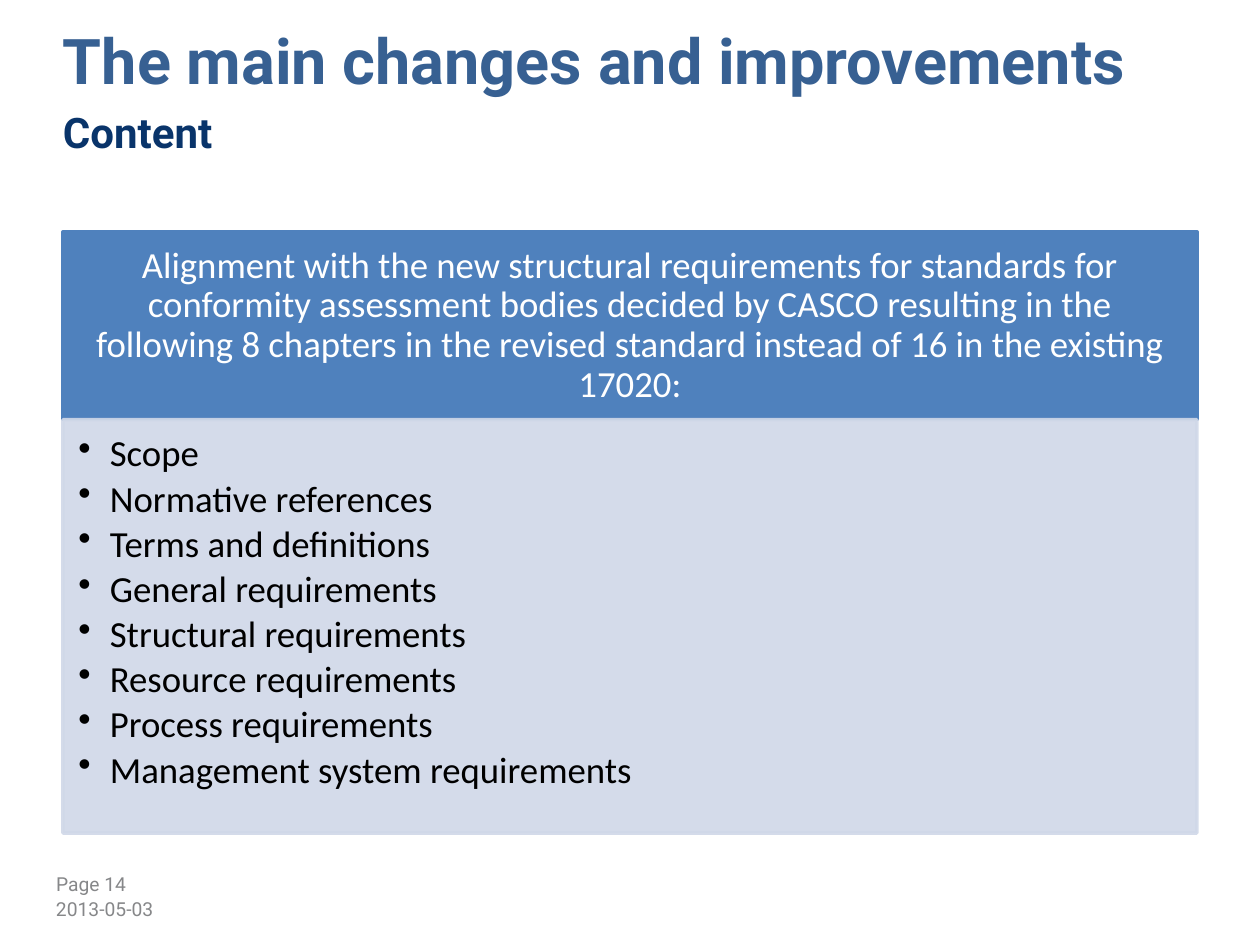
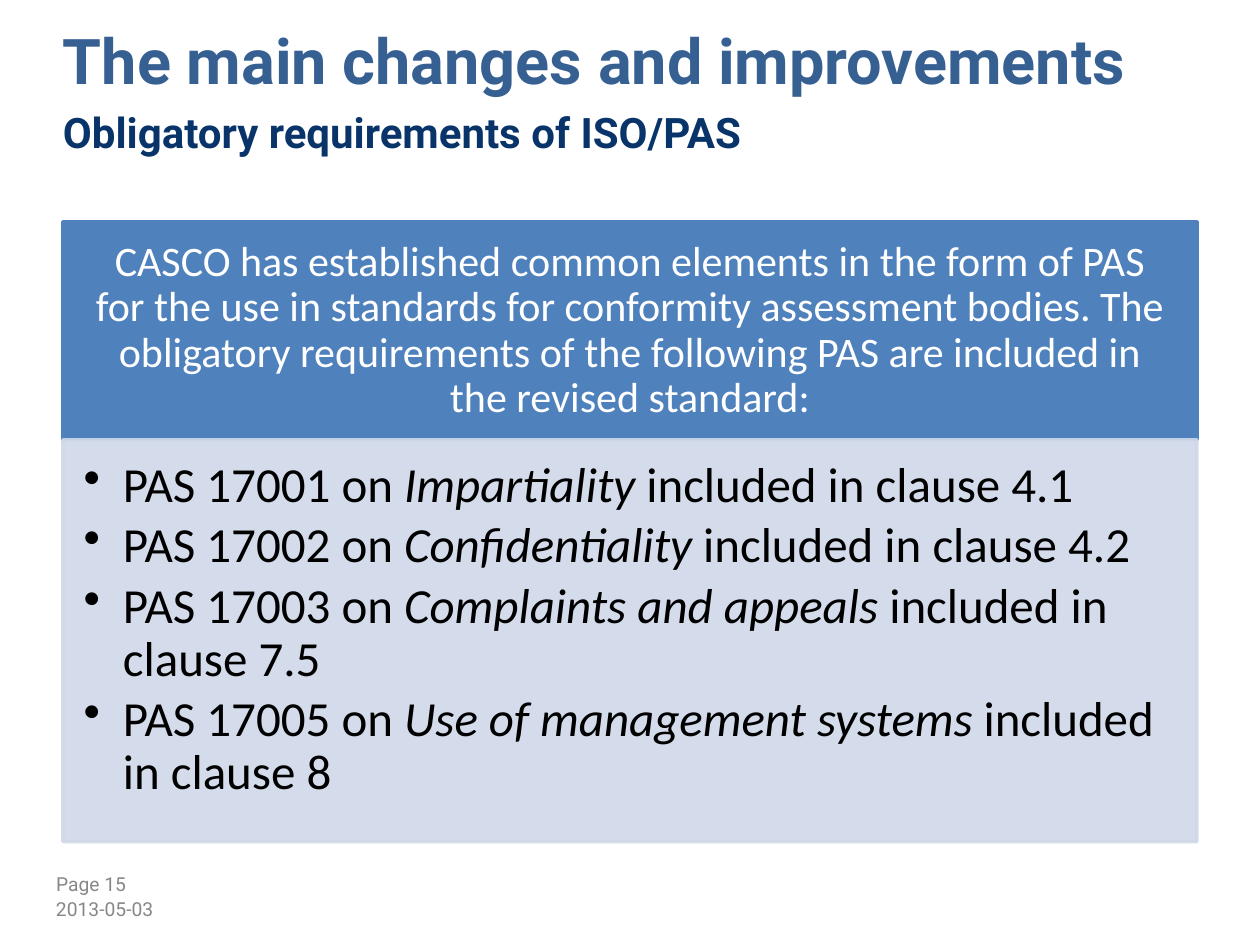
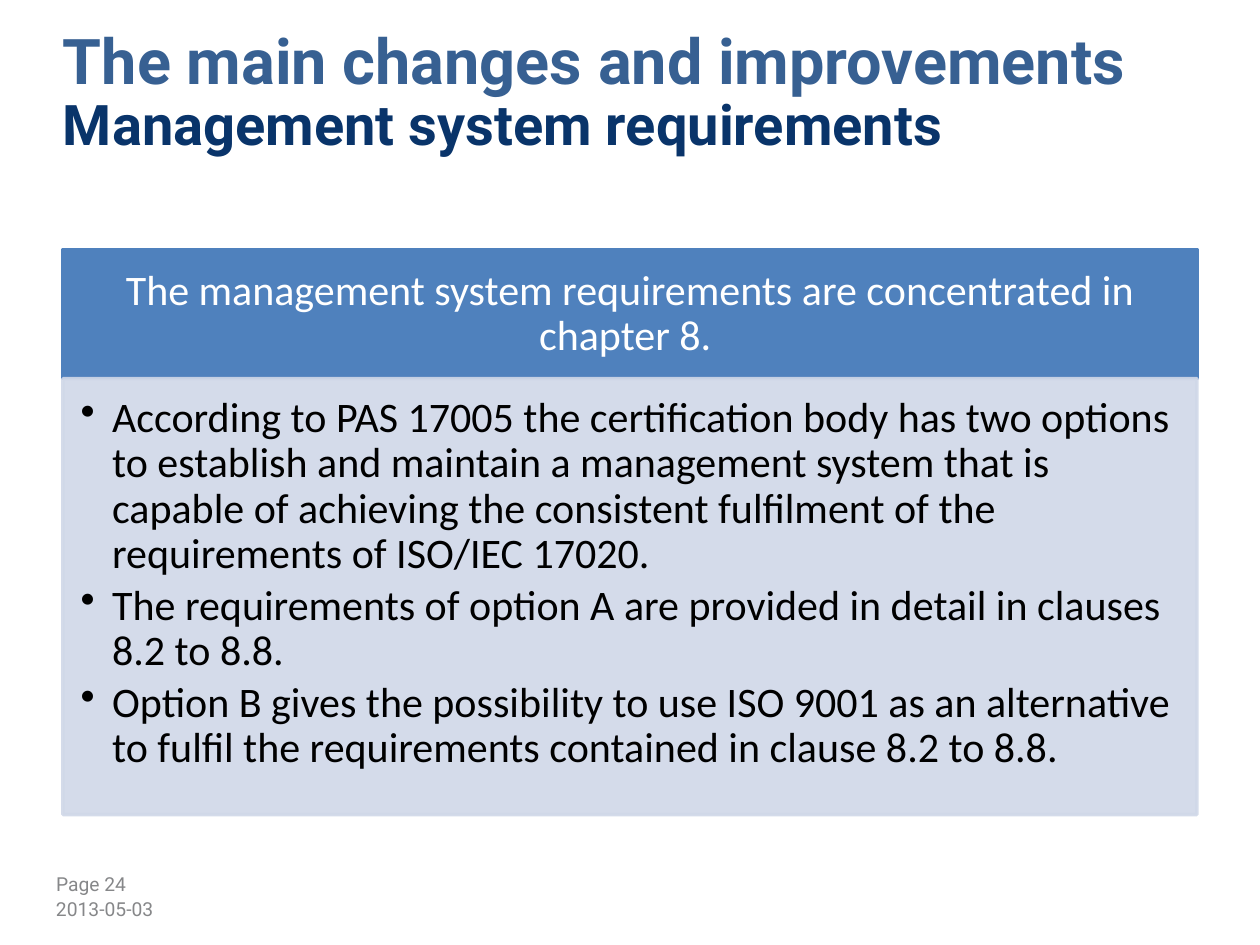
from lxml import etree
from pptx import Presentation
from pptx.dml.color import RGBColor as RGB
from pptx.enum.shapes import MSO_SHAPE as SHAPE
from pptx.enum.text import MSO_ANCHOR as ANCHOR, PP_ALIGN as ALIGN
from pptx.oxml.ns import qn
from pptx.util import Pt

COLORS = {
    "title": "376092",
    "subtitle": "09346A",
    "header": "4F81BD",
    "body": "D0D8E8",
    "white": "FFFFFF",
    "black": "000000",
    "footer": "868789",
}
HEAD_FONT, BODY_FONT = "Roboto", "Calibri"
LEFT, WIDTH = 36, 648
TITLE = "The main changes and improvements"
DATE = "2013-05-03"

SLIDES = [
    {
        "page": 14, "subtitle": "Content", "subtitle_size": 24,
        "top": 132.5, "header_height": 107.3, "body_height": 236.2,
        "header_size": 21, "body_size": 21, "indent": 18,
        "header": "Alignment with the new structural requirements for standards for "
                  "conformity assessment bodies decided by CASCO resulting in the "
                  "following 8 chapters in the revised standard instead of 16 in the "
                  "existing 17020:",
        "bullets": [
            "Scope",
            "Normative references",
            "Terms and definitions",
            "General requirements",
            "Structural requirements",
            "Resource requirements",
            "Process requirements",
            "Management system requirements",
        ],
    },
    {
        "page": 15, "subtitle": "Obligatory requirements of ISO/PAS", "subtitle_size": 24,
        "top": 126.7, "header_height": 124.6, "body_height": 229.7,
        "header_size": 24, "body_size": 28, "indent": 22.5,
        "header": "CASCO has established common elements in the form of PAS for the use "
                  "in standards for conformity assessment bodies. The obligatory "
                  "requirements of the following PAS are included in the revised standard:",
        "bullets": [
            "PAS 17001 on *Impartiality* included in clause 4.1",
            "PAS 17002 on *Confidentiality* included in clause 4.2",
            "PAS 17003 on *Complaints and appeals *included in clause 7.5",
            "PAS 17005 on *Use of management systems *included in clause 8",
        ],
    },
    {
        "page": 24, "subtitle": "Management system requirements", "subtitle_size": 32,
        "top": 142.6, "header_height": 73.8, "body_height": 249.1,
        "header_size": 24, "body_size": 24, "indent": 18,
        "header": "The management system requirements are concentrated in chapter 8. ",
        "bullets": [
            "According to PAS 17005 the certification body has two options to establish "
            "and maintain a management system that is capable of achieving the "
            "consistent fulfilment of the requirements of ISO/IEC 17020.",
            "The requirements of option A are provided in detail in clauses 8.2 to 8.8.",
            "Option B gives the possibility to use ISO 9001 as an alternative to fulfil "
            "the requirements contained in clause 8.2 to 8.8.",
        ],
    },
]


def add_text(p, text, size, color, font=BODY_FONT, bold=False):
    for i, part in enumerate(text.split("*")):
        r = p.add_run()
        r.text = part
        r.font.name = font
        r.font.size = Pt(size)
        r.font.bold = bold
        r.font.italic = i % 2 == 1
        r.font.color.rgb = RGB.from_string(COLORS[color])


def set_frame(tf, left=0, top=0, right=0, bottom=0, anchor=ANCHOR.TOP):
    tf.word_wrap = True
    tf.margin_left, tf.margin_top = Pt(left), Pt(top)
    tf.margin_right, tf.margin_bottom = Pt(right), Pt(bottom)
    tf.vertical_anchor = anchor


def add_box(s, *box):
    tf = s.shapes.add_textbox(*map(Pt, box)).text_frame
    set_frame(tf)
    return tf.paragraphs[0]


def add_panel(s, box, color, opacity=None):
    sp = s.shapes.add_shape(SHAPE.RECTANGLE, *map(Pt, box))
    sp.shadow.inherit = False
    sp.line.width = Pt(2)
    for fill in (sp.fill, sp.line.fill):
        fill.solid()
        fill.fore_color.rgb = RGB.from_string(COLORS[color])
    if opacity:
        for clr in sp._element.spPr.iter(qn("a:srgbClr")):
            etree.SubElement(clr, qn("a:alpha"), val=str(opacity * 1000))
    return sp.text_frame


def set_spacing(p, size, after, align):
    p.alignment = align
    p.line_spacing = 0.9
    p.space_after = Pt(round(size * after, 2))


def add_bullet(p, indent):
    pPr = p._p.get_or_add_pPr()
    pPr.set("marL", str(Pt(indent)))
    pPr.set("indent", str(-Pt(indent)))
    etree.SubElement(pPr, qn("a:buChar"), char="•")


def add_title(s, left, top, width, subtitle, subtitle_size):
    p = add_box(s, left, top, width, 90)
    p.line_spacing = Pt(34)
    add_text(p, TITLE, 36, "title", HEAD_FONT, bold=True)
    p.add_line_break()
    add_text(p, subtitle, subtitle_size, "subtitle", HEAD_FONT, bold=True)


def add_header(s, box, text, size):
    tf = add_panel(s, box, "header")
    set_frame(tf, 0.56 * size, 0.32 * size, 0.56 * size, 0.32 * size, ANCHOR.MIDDLE)
    p = tf.paragraphs[0]
    set_spacing(p, size, 0.35, ALIGN.CENTER)
    add_text(p, text, size, "white")


def add_body(s, box, bullets, size, indent):
    tf = add_panel(s, box, "body", opacity=90)
    set_frame(tf, 0.42 * size, 0.42 * size, 0.56 * size, 0.63 * size)
    for i, text in enumerate(bullets):
        p = tf.add_paragraph() if i else tf.paragraphs[0]
        set_spacing(p, size, 0.15, ALIGN.LEFT)
        add_bullet(p, indent)
        add_text(p, text, size, "black")


def add_footer(s, left, top, page):
    add_text(add_box(s, left, top, 168, 14), f"Page {page}", 11, "footer", HEAD_FONT)
    add_text(add_box(s, left, top + 14.6, 443, 26), DATE, 11, "footer", HEAD_FONT)


def add_slide(prs, d):
    s = prs.slides.add_slide(prs.slide_layouts[6])
    add_title(s, LEFT, 21.6, WIDTH, d["subtitle"], d["subtitle_size"])
    top, height = d["top"], d["header_height"]
    add_header(s, (LEFT, top, WIDTH, height), d["header"], d["header_size"])
    add_body(s, (LEFT, top + height, WIDTH, d["body_height"]),
             d["bullets"], d["body_size"], d["indent"])
    add_footer(s, 32, 498.2, d["page"])


def main():
    prs = Presentation()
    prs.slide_width, prs.slide_height = Pt(720), Pt(540)
    for d in SLIDES:
        add_slide(prs, d)
    prs.save("out.pptx")


if __name__ == "__main__":
    main()
